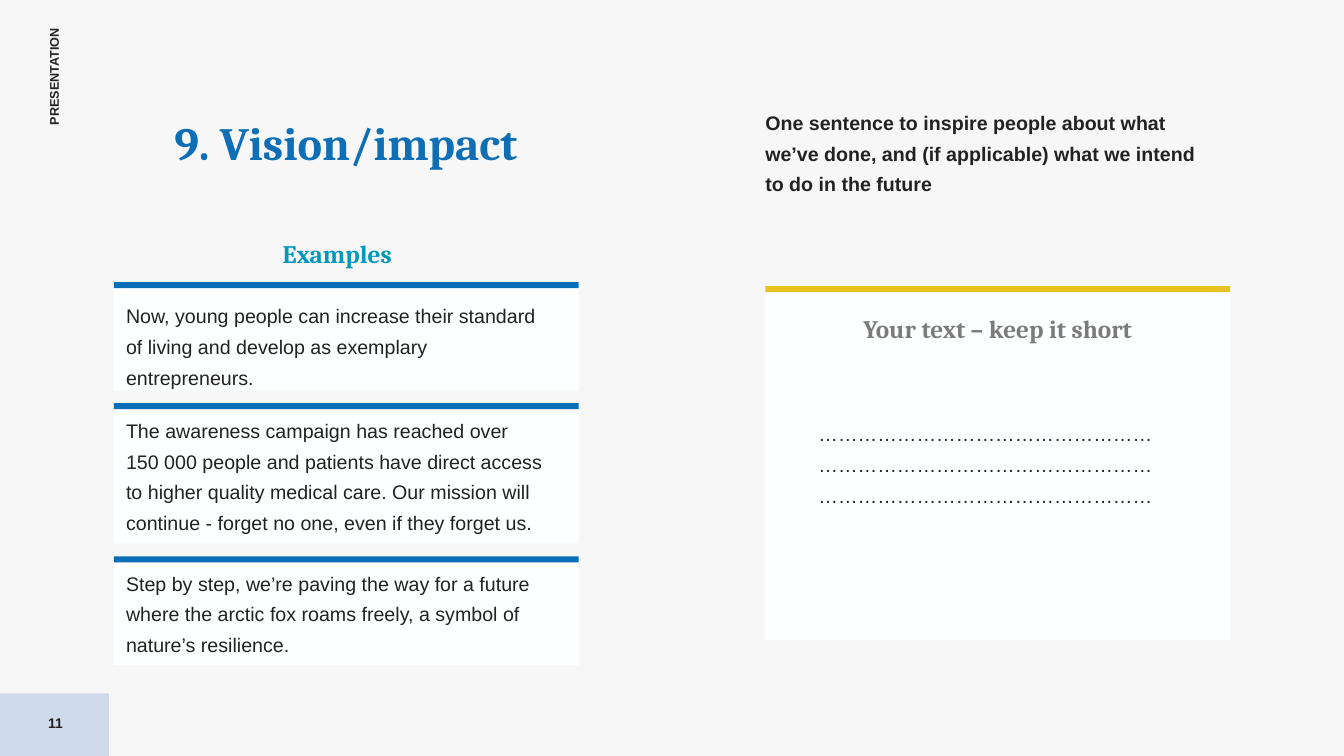
from dataclasses import dataclass

from pptx import Presentation
from pptx import util as u
from pptx.dml import color
from pptx.enum import shapes, text

COLORS = {
    "background": "F7F7F7",
    "page_corner": "CFDBEA",
    "panel": "FEFFFF",
    "example_bar": "0A6EB7",
    "answer_bar": "E7C41F",
    "ink": "222222",
    "title": "0E6EB6",
    "examples": "0099BC",
    "prompt": "7B7B7B",
}
TOP, MIDDLE = text.MSO_ANCHOR.TOP, text.MSO_ANCHOR.MIDDLE
BODY_INSETS = (0, 0.04, 0.24, 0.04)
LABEL_INSETS = (0.1, 0.05, 0.1, 0.05)
CARD_WIDTH = 4.61
BAR_HEIGHT = 0.06
EXAMPLES_LEFT = 1.13
ANSWER_LEFT = 7.59


@dataclass
class Card:
    left: float
    top: float
    height: float
    bar: str


@dataclass
class Words:
    content: str
    box: tuple[float, float, float, float]
    size: float = 14
    font: str = "Arial"
    color: str = "ink"
    bold: bool = False
    centered: bool = False
    spacing: float = 1.3
    anchor: text.MSO_ANCHOR = TOP
    insets: tuple[float, float, float, float] = BODY_INSETS
    grows: bool = True
    rotation: float = 0


@dataclass
class Example:
    top: float
    height: float
    text_top: float
    text_height: float
    content: str


EXAMPLES = [
    Example(2.8, 1.08, 2.91, 0.97,
            "Now, young people can increase their standard of living and "
            "develop as exemplary entrepreneurs."),
    Example(4, 1.39, 4.05, 1.27,
            "The awareness campaign has reached over\n150 000 people and "
            "patients have direct access to higher quality medical care. "
            "Our mission will continue - forget no one, even if they forget us."),
    Example(5.52, 1.08, 5.56, 0.97,
            "Step by step, we’re paving the way for a future where the arctic "
            "fox roams freely, a symbol of nature’s resilience."),
]


def heading(content: str, left: float, top: float, tint: str) -> Words:
    return Words(content, (left, top, 3.45, 0.35), 18, "Cambria", tint,
                 bold=True, centered=True, anchor=MIDDLE, insets=(0, 0, 0, 0))


FRAME_LABELS = [
    Words("PRESENTATION", (-0.06, 0.62, 1.19, 0.25), 9, bold=True, spacing=1,
          insets=LABEL_INSETS, rotation=270),
    Words("11", (0, 6.97, 1.1, 0.4), 10, bold=True, centered=True, spacing=1,
          anchor=MIDDLE, insets=LABEL_INSETS, grows=False),
]
INTRODUCTION = [
    Words("One sentence to inspire people about what we’ve done, and "
          "(if applicable) what we intend to do in the future",
          (ANSWER_LEFT, 0.99, CARD_WIDTH, 0.97), bold=True),
    Words("9. Vision/impact", (EXAMPLES_LEFT, 1.03, 4.6, 0.89), 33, "Cambria",
          "title", bold=True, centered=True, spacing=0.8,
          insets=(0, 0.21, 0, 0), grows=False),
]
ANSWER = [
    heading("Your text – keep it short", 8.17, 3.04, "prompt"),
    Words("…" * 51, (8.08, 4.08, 3.63, 0.97), centered=True),
]


def rgb(name: str) -> color.RGBColor:
    return color.RGBColor.from_string(COLORS[name])


def draw_block(slide, left: float, top: float, width: float, height: float,
               tint: str) -> None:
    block = slide.shapes.add_shape(
        shapes.MSO_SHAPE.RECTANGLE,
        *map(u.Inches, (left, top, width, height)))
    block.shadow.inherit = False
    block.fill.solid()
    block.fill.fore_color.rgb = rgb(tint)
    block.line.fill.background()


def draw_card(slide, card: Card) -> None:
    draw_block(slide, card.left, card.top, CARD_WIDTH, card.height, "panel")
    draw_block(slide, card.left, card.top, CARD_WIDTH, BAR_HEIGHT, card.bar)


def draw_words(slide, words: Words) -> None:
    box = slide.shapes.add_textbox(*map(u.Inches, words.box))
    box.rotation = words.rotation
    frame = box.text_frame
    frame.word_wrap = True
    frame.auto_size = (text.MSO_AUTO_SIZE.SHAPE_TO_FIT_TEXT if words.grows
                       else text.MSO_AUTO_SIZE.NONE)
    frame.vertical_anchor = words.anchor
    (frame.margin_left, frame.margin_top,
     frame.margin_right, frame.margin_bottom) = map(u.Inches, words.insets)
    paragraph = frame.paragraphs[0]
    paragraph.alignment = (text.PP_ALIGN.CENTER if words.centered
                           else text.PP_ALIGN.LEFT)
    paragraph.line_spacing = float(words.spacing)
    for index, line in enumerate(words.content.split("\n")):
        if index:
            paragraph.add_line_break()
        run = paragraph.add_run()
        run.text = line
        run.font.name = words.font
        run.font.size = u.Pt(words.size)
        run.font.bold = words.bold
        run.font.color.rgb = rgb(words.color)


def main() -> None:
    deck = Presentation()
    deck.slide_width, deck.slide_height = u.Inches(13.33), u.Inches(7.5)
    slide = deck.slides.add_slide(deck.slide_layouts[6])
    slide.background.fill.solid()
    slide.background.fill.fore_color.rgb = rgb("background")

    draw_block(slide, 0, 6.88, 1.08, 0.62, "page_corner")
    for words in FRAME_LABELS + INTRODUCTION:
        draw_words(slide, words)

    draw_card(slide, Card(ANSWER_LEFT, 2.84, 3.51, "answer_bar"))
    for words in ANSWER:
        draw_words(slide, words)

    draw_words(slide, heading("Examples", 1.62, 2.29, "examples"))
    for example in EXAMPLES:
        draw_card(slide, Card(EXAMPLES_LEFT, example.top, example.height,
                              "example_bar"))
        draw_words(slide, Words(example.content, (
            1.25, example.text_top, 4.48, example.text_height)))

    deck.save("out.pptx")


if __name__ == "__main__":
    main()
